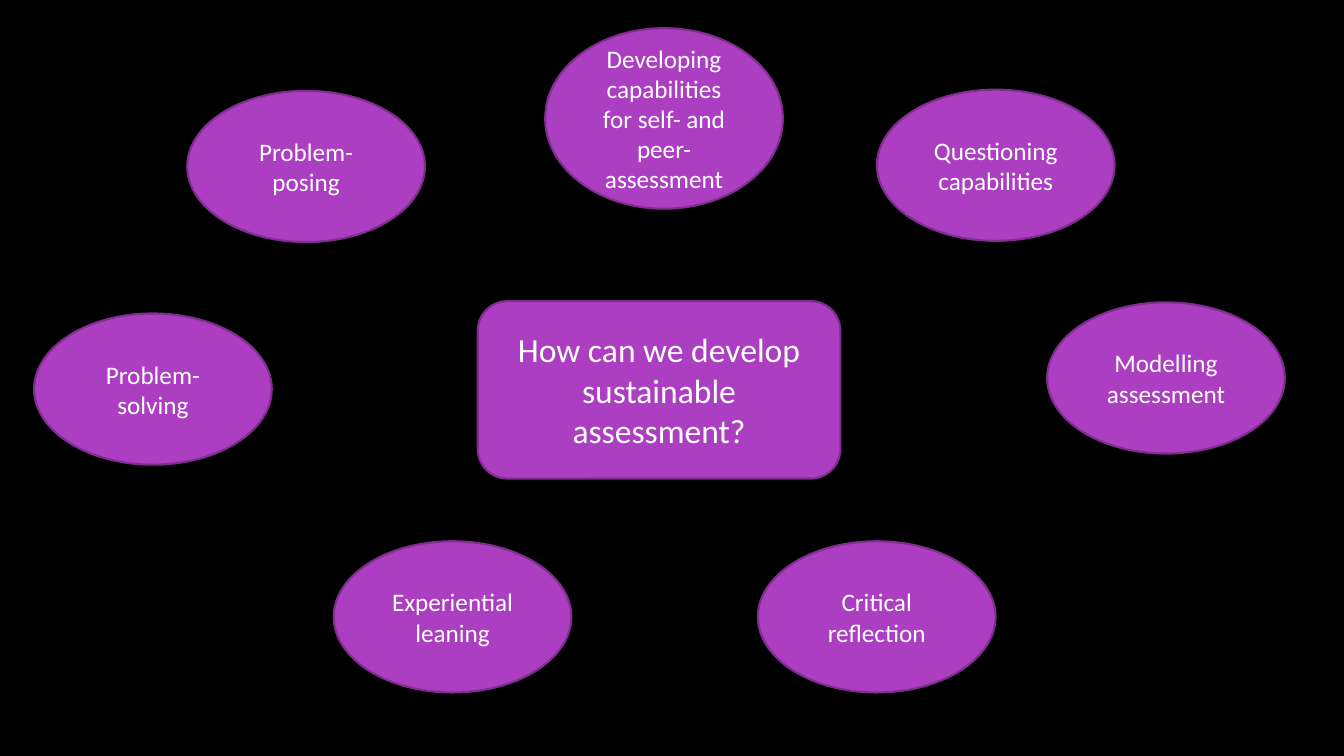
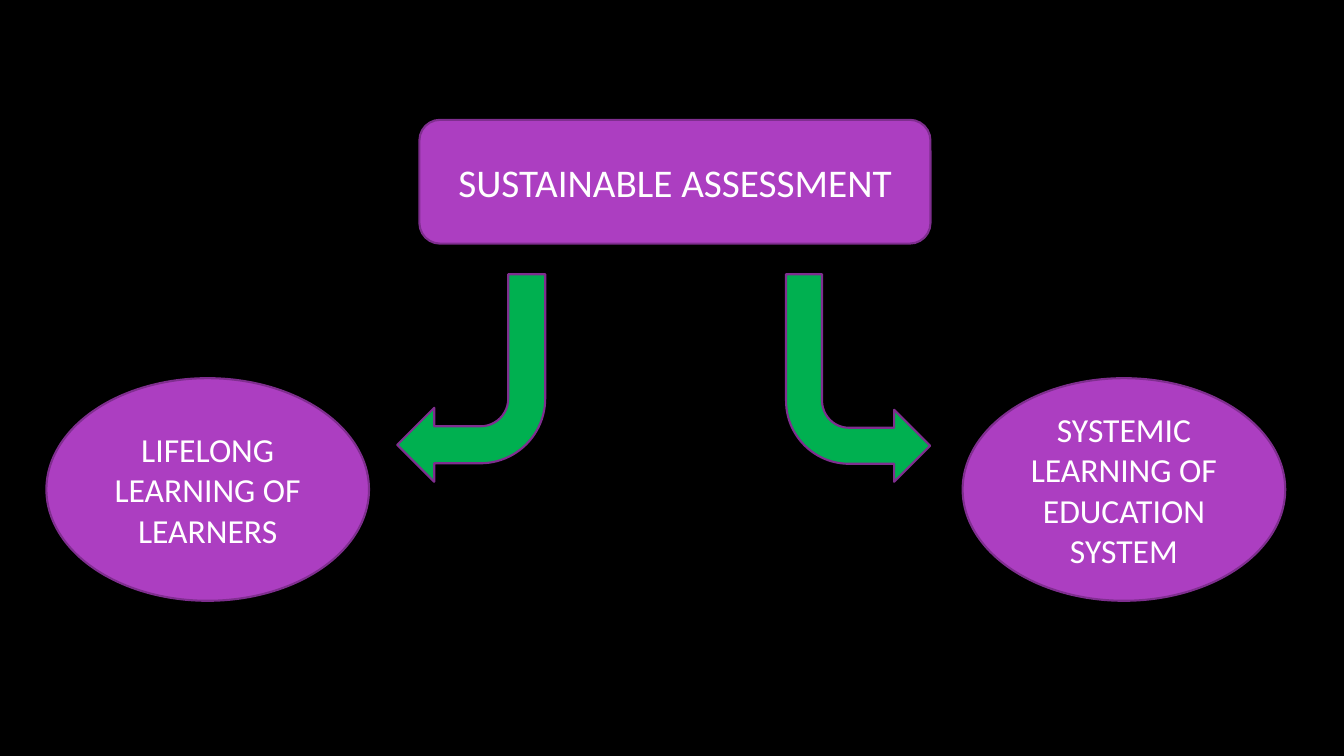
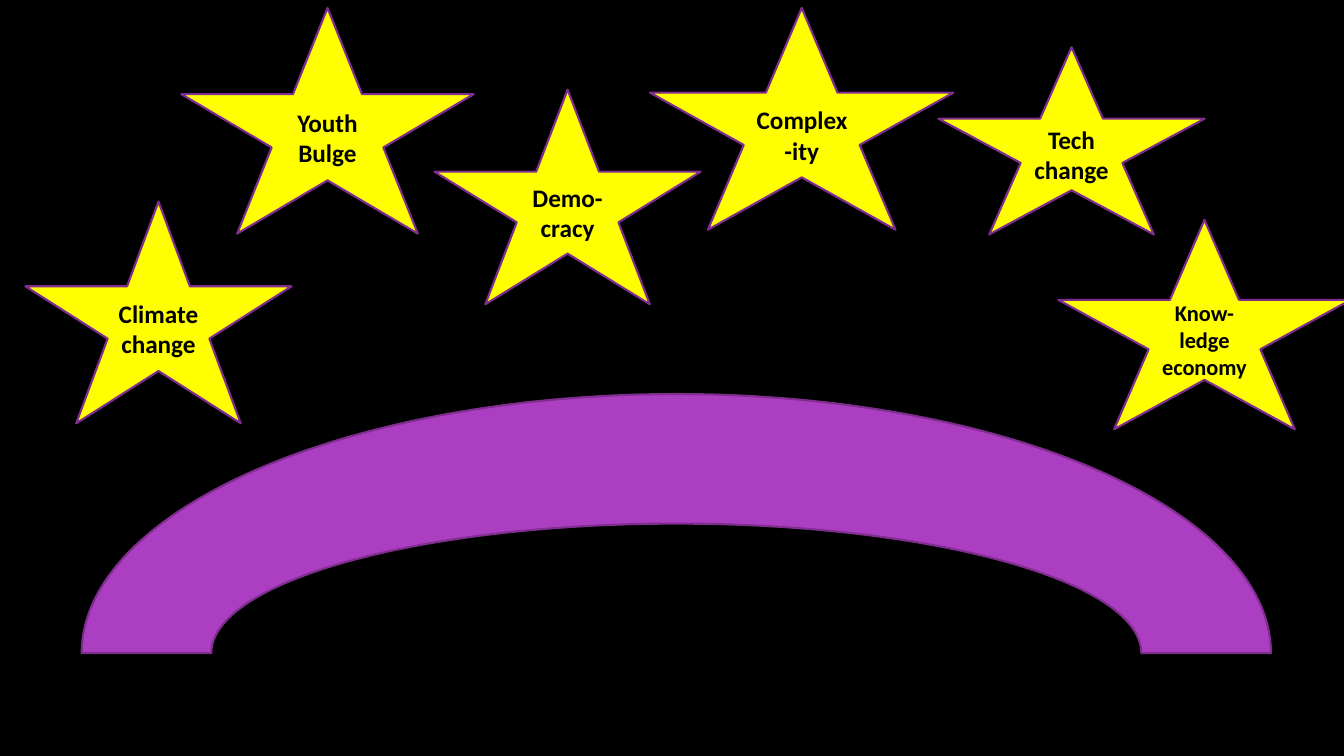
from pptx import Presentation
from pptx.dml.color import RGBColor
from pptx.enum.shapes import MSO_SHAPE as Preset
from pptx.enum.text import MSO_ANCHOR as Anchor, PP_ALIGN as Align
from pptx.util import Cm, Pt

FONT = "Calibri"
BLACK = "000000"
WHITE = "FFFFFF"
PURPLE = "AC3EC1"
OUTLINE = "7F2E8F"
GREEN = "00B050"
YELLOW = "FFFF00"


def color(value):
    return RGBColor.from_string(value)


def paint(fill, value):
    fill.solid()
    fill.fore_color.rgb = color(value)


def write_text(shape, text, size=18, bold=False, font_color=WHITE):
    frame = shape.text_frame
    frame.word_wrap = True
    frame.vertical_anchor = Anchor.MIDDLE
    paragraph = frame.paragraphs[0]
    paragraph.alignment = Align.CENTER
    run = paragraph.add_run()
    run.text = text
    run.font.name = FONT
    run.font.size = Pt(size)
    run.font.bold = bold
    run.font.color.rgb = color(font_color)


def add_figure(slide, preset, left, top, width, height, fill=PURPLE):
    shape = slide.shapes.add_shape(preset, Cm(left), Cm(top), Cm(width), Cm(height))
    shape.shadow.inherit = False
    paint(shape.fill, fill)
    shape.line.color.rgb = color(OUTLINE)
    shape.line.width = Pt(1.5)
    return shape


def add_box(slide, text, left, top, width, height, size):
    box = add_figure(slide, Preset.ROUNDED_RECTANGLE, left, top, width, height)
    write_text(box, text, size=size)


def add_bubble(slide, text, left, top, width=5.99, height=3.81, size=18):
    bubble = add_figure(slide, Preset.OVAL, left, top, width, height)
    write_text(bubble, text, size=size)


def add_star(slide, text, left, top, width, height, size=18):
    star = add_figure(slide, Preset.STAR_5_POINT, left, top, width, height, fill=YELLOW)
    write_text(star, text, size=size, bold=True, font_color=BLACK)


def add_bent_arrow(slide, left, width, to_right=False):
    arrow = add_figure(slide, Preset.BENT_ARROW, left, 6.91, width, 5.23, fill=GREEN)
    arrow.rotation = 180
    if to_right:
        arrow._element.spPr.xfrm.set("flipH", "1")


def build_question_slide(slide):
    add_box(slide, "How can we develop sustainable assessment?", 12.04, 7.59, 9.14, 4.47, 24)
    add_bubble(slide, "Problem-posing", 4.72, 2.29)
    add_bubble(slide, "Problem-solving", 0.86, 7.9)
    add_bubble(slide, "Questioning capabilities", 22.1, 2.26)
    add_bubble(slide, "Developing capabilities for self- and peer-assessment",
               13.74, 0.71, height=4.55)
    add_bubble(slide, "Experiential leaning", 8.41, 13.64)
    add_bubble(slide, "Critical reflection", 19.1, 13.64)
    add_bubble(slide, "Modelling assessment", 26.39, 7.62)


def build_outcomes_slide(slide):
    add_box(slide, "SUSTAINABLE ASSESSMENT", 10.57, 3.02, 12.88, 3.12, 28)
    add_bent_arrow(slide, 10.01, 3.73)
    add_bent_arrow(slide, 19.81, 3.63, to_right=True)
    outcomes = [
        ("LIFELONG LEARNING OF LEARNERS", 1.17),
        ("SYSTEMIC LEARNING OF EDUCATION SYSTEM", 24.26),
    ]
    for text, left in outcomes:
        add_bubble(slide, text, left, 9.53, width=8.13, height=5.61, size=24)


def build_challenges_slide(slide):
    add_figure(slide, Preset.BLOCK_ARC, 2.06, 9.93, 29.97, 13.06)
    add_star(slide, "Climate change", 0.64, 5.08, 6.71, 5.59)
    add_star(slide, "Youth Bulge", 4.57, 0.2, 7.37, 5.69)
    add_star(slide, "Demo-cracy", 10.95, 2.26, 6.71, 5.41)
    add_star(slide, "Tech change", 23.65, 1.19, 6.71, 4.72)
    add_star(slide, "Know-ledge economy", 26.67, 5.54, 7.37, 5.28, size=16)
    add_star(slide, "Complex-ity", 16.38, 0.2, 7.65, 5.59)


def main():
    presentation = Presentation()
    presentation.slide_width = Cm(33.87)
    presentation.slide_height = Cm(19.05)
    paint(presentation.slide_master.background.fill, BLACK)
    blank_layout = presentation.slide_layouts[6]
    for build in (build_question_slide, build_outcomes_slide, build_challenges_slide):
        build(presentation.slides.add_slide(blank_layout))
    presentation.save("out.pptx")


if __name__ == "__main__":
    main()
